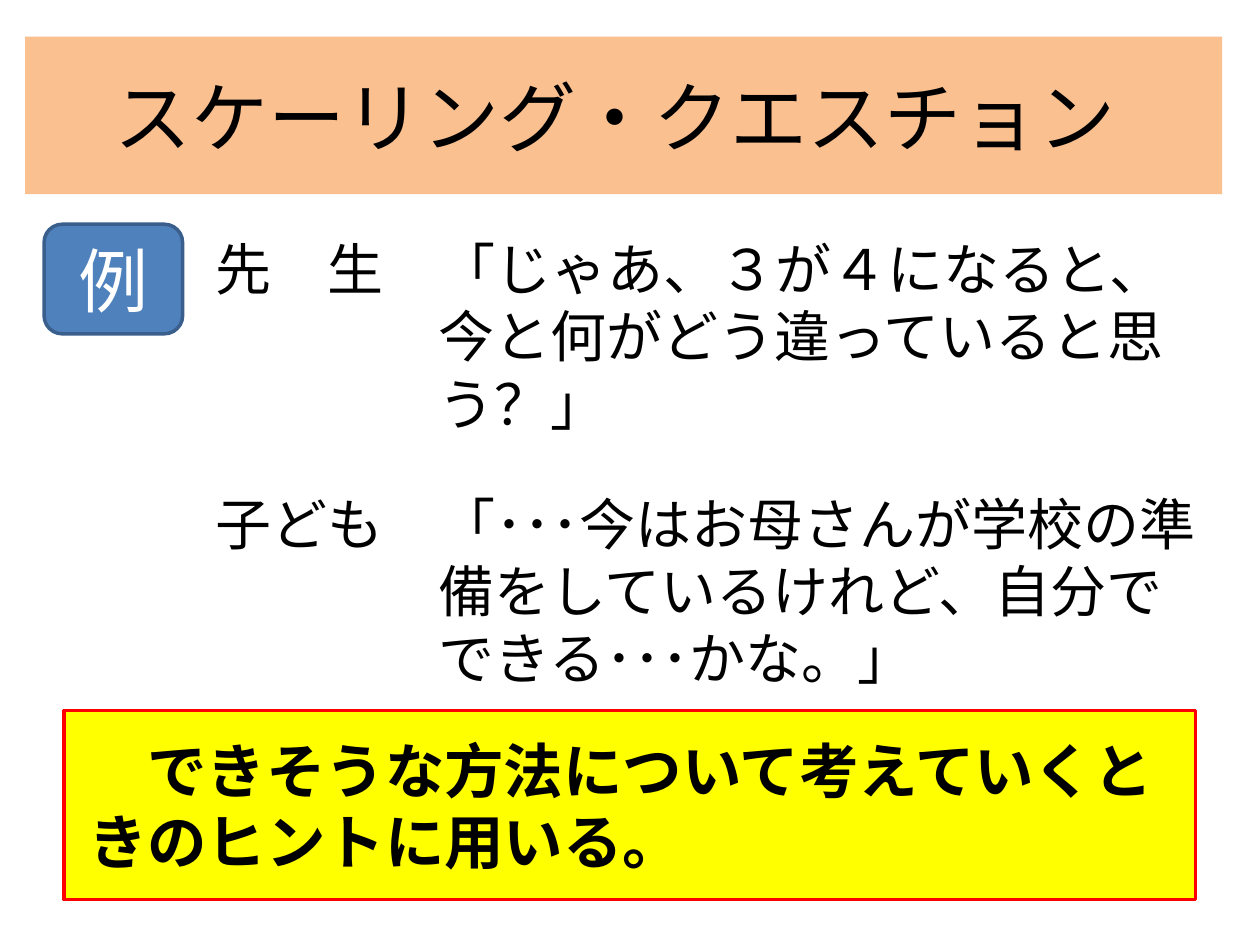
from typing import NamedTuple, Optional

from lxml.etree import SubElement
from pptx import Presentation
from pptx.dml.color import RGBColor
from pptx.enum.shapes import MSO_SHAPE
from pptx.enum.text import MSO_ANCHOR, MSO_AUTO_SIZE, PP_ALIGN
from pptx.oxml import parse_xml
from pptx.oxml.ns import nsdecls, qn
from pptx.util import Inches, Pt

FONT = "Noto Sans CJK JP"
BLACK = RGBColor(0x00, 0x00, 0x00)
WHITE = RGBColor(0xFF, 0xFF, 0xFF)
PEACH = RGBColor(0xFA, 0xC0, 0x90)
BLUE = RGBColor(0x4F, 0x81, 0xBD)
NAVY = RGBColor(0x3A, 0x5F, 0x8C)
YELLOW = RGBColor(0xFF, 0xFF, 0x00)
RED = RGBColor(0xFF, 0x00, 0x00)


class Style(NamedTuple):
    size: float
    color: RGBColor = BLACK
    bold: bool = False
    align: PP_ALIGN = PP_ALIGN.LEFT
    left: float = 0
    indent: float = 0
    pitch: Optional[float] = None
    gap: float = 0


class Panel(NamedTuple):
    kind: MSO_SHAPE
    box: tuple
    fill: RGBColor
    line: RGBColor
    text: str
    style: Style


TITLE = Style(44)
TALK = Style(32, left=1.77, indent=-1.77, pitch=38.5, gap=30)
LINES = [
    "先　生　「じゃあ、３が４になると、今と何がどう違っていると思う？」",
    "子ども　「･･･今はお母さんが学校の準備をしているけれど、自分でできる･･･かな。」",
]
PANELS = [
    Panel(MSO_SHAPE.ROUNDED_RECTANGLE, (0.35, 1.78, 1.1, 0.87), BLUE, NAVY,
          "例", Style(40, WHITE, align=PP_ALIGN.CENTER)),
    Panel(MSO_SHAPE.RECTANGLE, (0.51, 5.64, 8.98, 1.5), YELLOW, RED,
          "　できそうな方法について考えていくときのヒントに用いる。",
          Style(34, bold=True, left=0.09, pitch=40.5)),
]


def place(shape, box: tuple) -> None:
    shape.left, shape.top, shape.width, shape.height = map(Inches, box)


def write(shape, lines: list[str], style: Style, anchor: MSO_ANCHOR) -> None:
    frame = shape.text_frame
    frame.text = "\n".join(lines)
    frame.word_wrap = True
    frame.auto_size = MSO_AUTO_SIZE.NONE
    frame.vertical_anchor = anchor
    for i, para in enumerate(frame.paragraphs):
        para.alignment = style.align
        para.space_before = Pt(style.gap if i else 0)
        if style.pitch:
            para.line_spacing = Pt(style.pitch)
        font = para.font
        font.name, font.size, font.bold = FONT, Pt(style.size), style.bold
        font.color.rgb = style.color
        props = para._p.get_or_add_pPr()
        props.set("marL", str(Inches(style.left)))
        props.set("indent", str(Inches(style.indent)))
        base = props.find(qn("a:defRPr"))
        SubElement(base, qn("a:ea")).set("typeface", FONT)
        base.addprevious(parse_xml(f"<a:buNone {nsdecls('a')}/>"))


def draw(slide, panel: Panel) -> None:
    shape = slide.shapes.add_shape(panel.kind, *map(Inches, panel.box))
    shape.shadow.inherit = False
    shape.fill.solid()
    shape.fill.fore_color.rgb = panel.fill
    shape.line.color.rgb = panel.line
    shape.line.width = Pt(2)
    write(shape, [panel.text], panel.style, MSO_ANCHOR.MIDDLE)


def main() -> None:
    deck = Presentation()
    deck.slide_width, deck.slide_height = Inches(10), Inches(7.5)
    slide = deck.slides.add_slide(deck.slide_layouts[1])

    title = slide.shapes.title
    place(title, (0.2, 0.29, 9.5, 1.25))
    title.fill.solid()
    title.fill.fore_color.rgb = PEACH
    write(title, ["　スケーリング・クエスチョン"], TITLE, MSO_ANCHOR.MIDDLE)

    talk = slide.placeholders[1]
    place(talk, (1.61, 1.81, 8.11, 3.75))
    write(talk, LINES, TALK, MSO_ANCHOR.TOP)

    for panel in PANELS:
        draw(slide, panel)
    deck.save("out.pptx")


if __name__ == "__main__":
    main()
